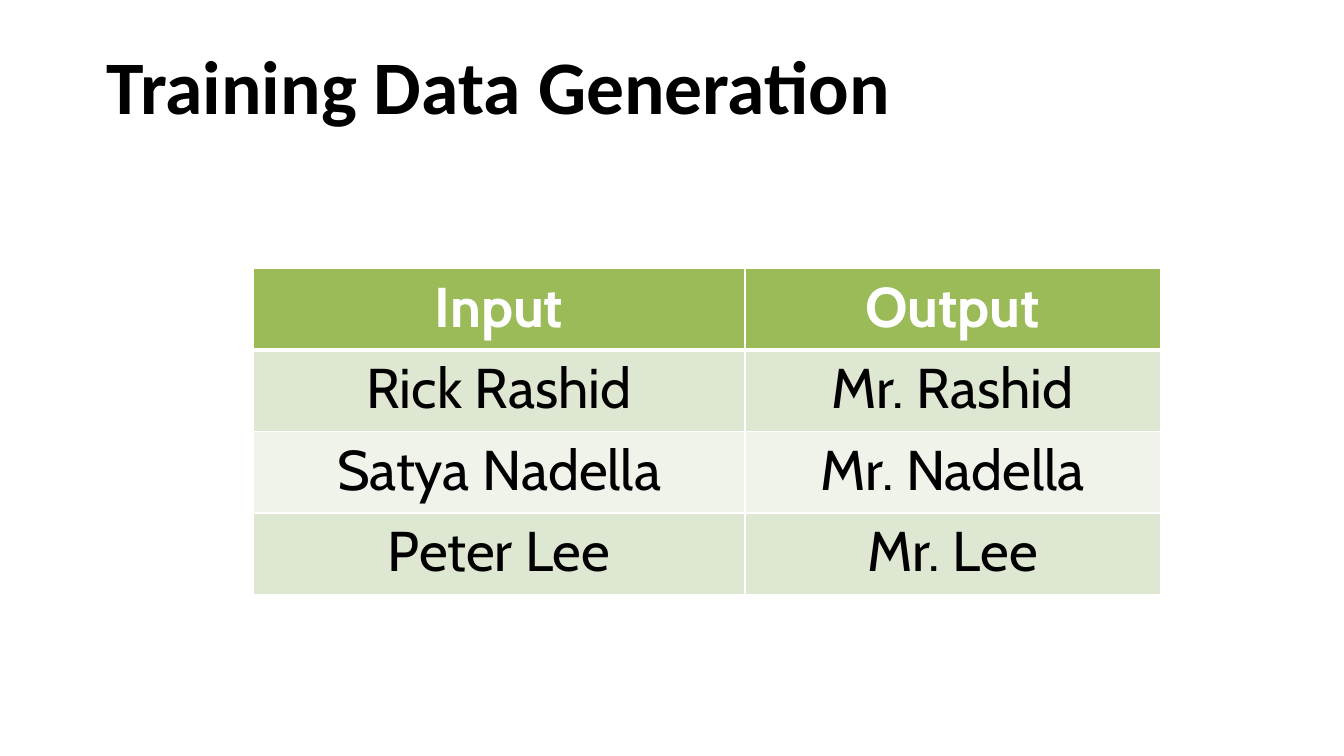
"""Build a slide with a table of training data pairs."""
import pptx
import pptx.dml.color
import pptx.enum.text
import pptx.oxml
import pptx.oxml.ns
import pptx.util

TITLE = "Training Data Generation"
ROWS = [
    ("Input", "Output"),
    ("Rick Rashid", "Mr. Rashid"),
    ("Satya Nadella", "Mr. Nadella"),
    ("Peter Lee", "Mr. Lee"),
]
COLORS = {"black": "000000", "white": "FFFFFF", "header": "9BBB59",
          "odd": "DEE7D1", "even": "EFF3EA"}
TITLE_BOX = (0.96, 0.17, 11.5, 1.45)
TABLE_POS = (2.51, 2.66)
COL_WIDTHS = (4.88, 4.12)
ROW_HEIGHT = 0.81
TITLE_FONT = {"name": "Calibri", "size": pptx.util.Pt(54), "bold": True}
HEADER_FONT = {"name": "Cabin", "size": pptx.util.Pt(40), "bold": True}
BODY_FONT = {**HEADER_FONT, "bold": False}


def rgb(name):
    """Return the named colour."""
    return pptx.dml.color.RGBColor.from_string(COLORS[name])


def write(tf, text, align, font, color):
    """Write one formatted paragraph."""
    p = tf.paragraphs[0]
    p.alignment = align
    r = p.add_run()
    r.text = text
    for key, value in font.items():
        setattr(r.font, key, value)
    r.font.color.rgb = rgb(color)
    return p


def add_borders(cell, widths):
    """Draw white cell borders with widths in points by side."""
    tc_pr = cell._tc.get_or_add_tcPr()
    for side, width in widths.items():
        tc_pr.append(pptx.oxml.parse_xml(
            f'<a:ln{side} {pptx.oxml.ns.nsdecls("a")} w="{pptx.util.Pt(width)}">'
            f'<a:solidFill><a:srgbClr val="{COLORS["white"]}"/></a:solidFill>'
            f'</a:ln{side}>'))


def main():
    """Build and save the presentation."""
    align = pptx.enum.text.PP_ALIGN
    prs = pptx.Presentation()
    prs.slide_width = pptx.util.Inches(13.33)
    prs.slide_height = pptx.util.Inches(7.5)
    s = prs.slides.add_slide(prs.slide_layouts[5])

    title = s.shapes.title
    for key, value in zip(("left", "top", "width", "height"), TITLE_BOX):
        setattr(title, key, pptx.util.Inches(value))
    tf = title.text_frame
    tf.auto_size = pptx.enum.text.MSO_AUTO_SIZE.NONE
    tf.vertical_anchor = pptx.enum.text.MSO_ANCHOR.MIDDLE
    write(tf, TITLE, align.LEFT, TITLE_FONT, "black").line_spacing = 0.9

    box = (*TABLE_POS, sum(COL_WIDTHS), ROW_HEIGHT * len(ROWS))
    table = s.shapes.add_table(len(ROWS), len(COL_WIDTHS),
                               *map(pptx.util.Inches, box)).table
    for column, width in zip(table.columns, COL_WIDTHS):
        column.width = pptx.util.Inches(width)
    for i, texts in enumerate(ROWS):
        header = i == 0
        fill = "header" if header else ("even", "odd")[i % 2]
        font = HEADER_FONT if header else BODY_FONT
        color = "white" if header else "black"
        widths = {"L": 1, "R": 1, "T": 3 if i == 1 else 1, "B": 3 if header else 1}
        for j, text in enumerate(texts):
            cell = table.cell(i, j)
            add_borders(cell, widths)
            cell.fill.solid()
            cell.fill.fore_color.rgb = rgb(fill)
            write(cell.text_frame, text, align.CENTER, font, color)

    prs.save("out.pptx")


if __name__ == "__main__":
    main()
